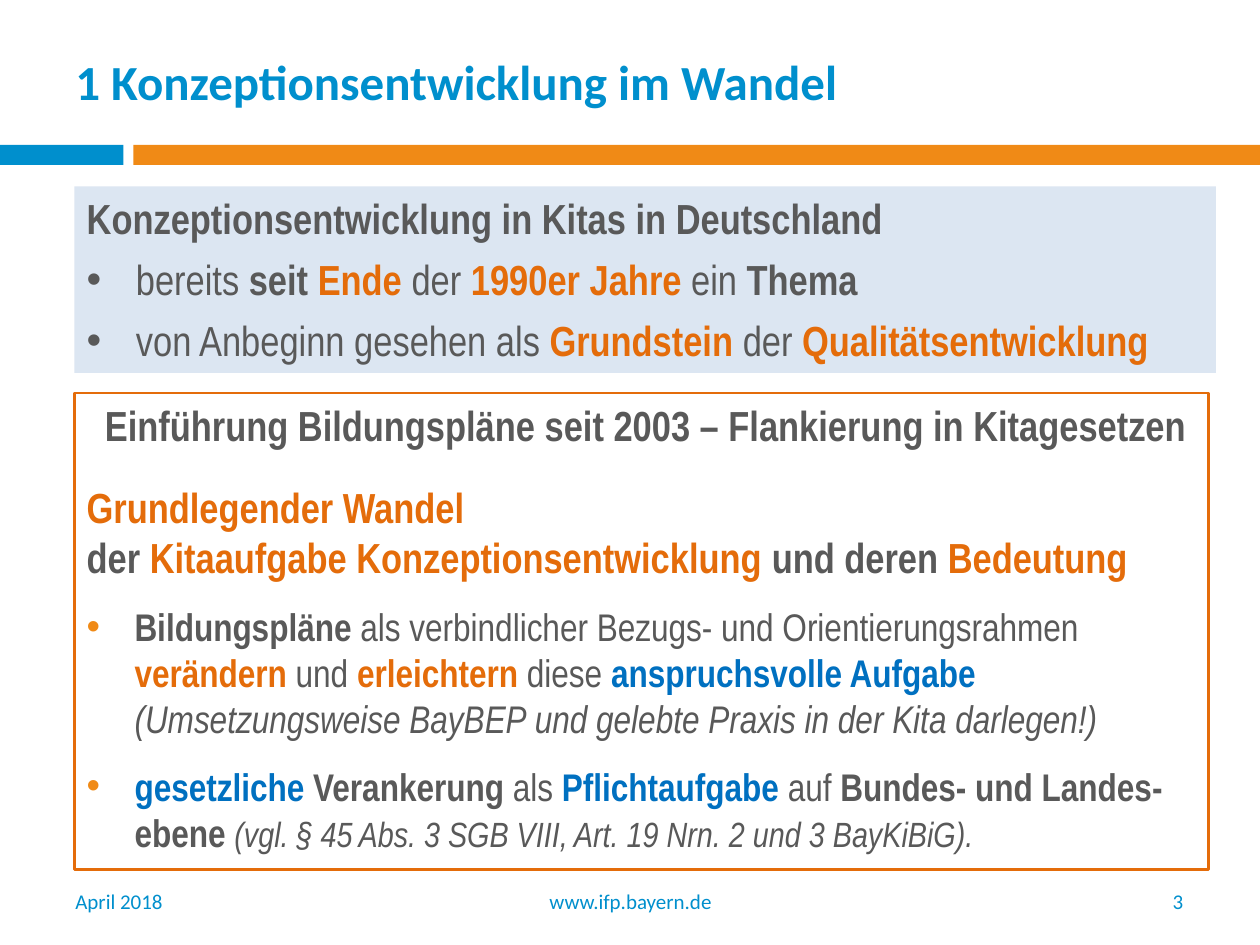
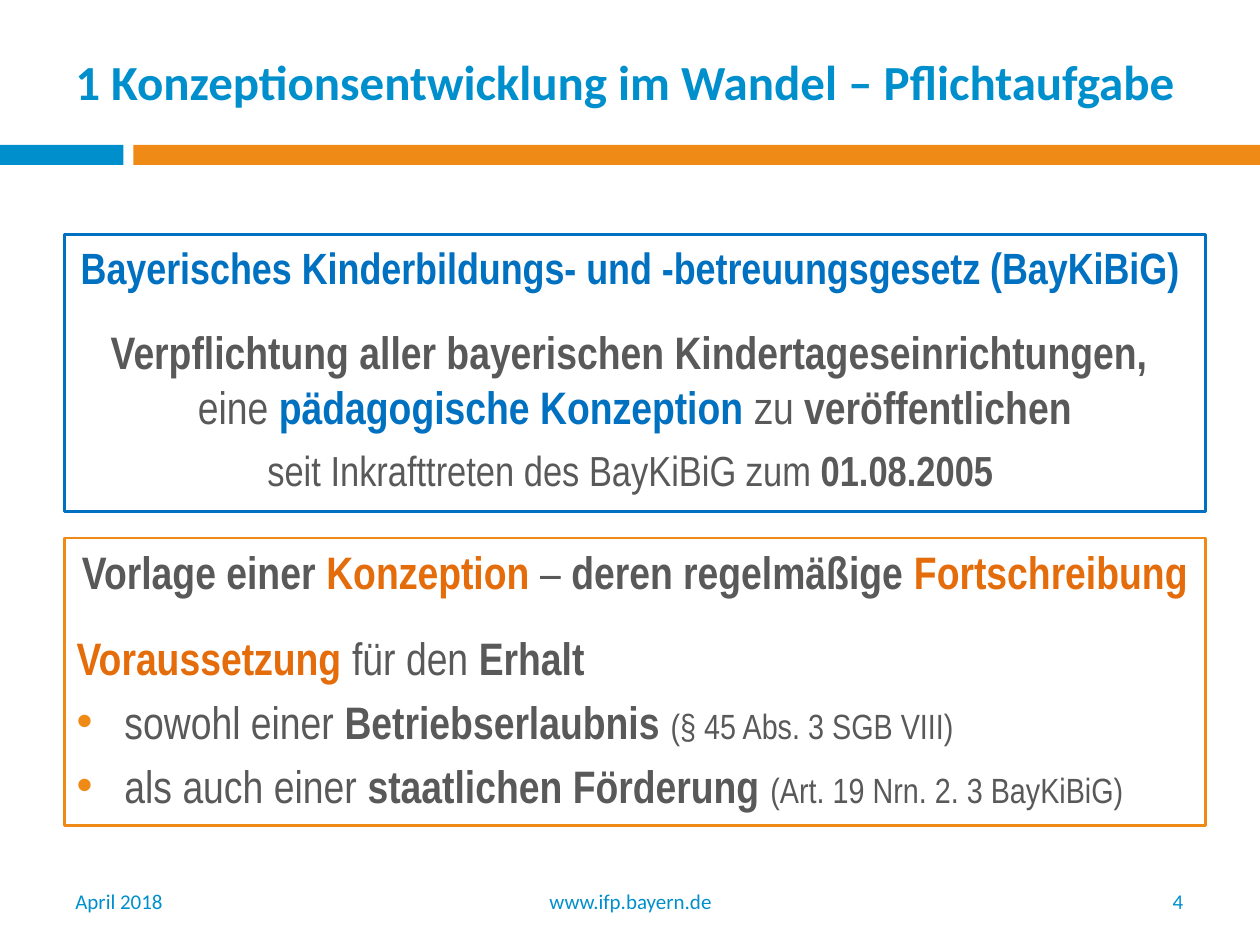
from pptx import Presentation
from pptx.util import Inches, Pt
from pptx.dml.color import RGBColor
from pptx.enum.shapes import MSO_SHAPE as Shape
from pptx.enum.text import PP_ALIGN as Align, MSO_ANCHOR as Anchor
from pptx.oxml.ns import qn
from lxml.etree import SubElement

CYAN, AMBER, ORANGE = "008FCD", "F08A16", "E46C0A"
BLUE, GRAY, PALE = "0070C0", "595959", "DCE6F2"
TINTS = {"o": ORANGE, "u": BLUE}


def color(code):
    """Turn a hex string into a colour."""
    return RGBColor.from_string(code)


class Deck:
    """Hold the style and the current slide."""

    def __init__(self):
        """Start an empty 4:3 deck."""
        self.prs = Presentation()
        self.prs.slide_width, self.prs.slide_height = Inches(10), Inches(7.5)
        self.slide = None

    def page(self, title, num):
        """Add a slide with title, bands and footer."""
        self.slide = self.prs.slides.add_slide(self.prs.slide_layouts[6])
        self.rect((1.06, 1.15, 8.94, 0.16), fill=AMBER)
        self.rect((0, 1.15, 0.98, 0.16), fill=CYAN)
        self.label((0.5, 0.3, 9, 0.69), title, 28, bold=True)
        self.label((0.5, 6.95, 2.33, 0.4), "April 2018", 12)
        self.label((3.42, 6.95, 3.17, 0.4), "www.ifp.bayern.de", 12, Align.CENTER)
        self.label((7.17, 6.95, 2.32, 0.4), str(num), 12, Align.RIGHT)

    def rect(self, area, fill=None, line=None):
        """Draw a rectangle with an optional fill and outline."""
        box = self.slide.shapes.add_shape(Shape.RECTANGLE, *map(Inches, area))
        box.shadow.inherit = False
        if fill:
            box.fill.solid()
            box.fill.fore_color.rgb = color(fill)
        else:
            box.fill.background()
        if line:
            box.line.color.rgb = color(line)
            box.line.width = Pt(1.5)
        else:
            box.line.fill.background()
        return box

    def label(self, area, text, size, align=Align.LEFT, bold=False):
        """Write one line in the title and footer style."""
        frame = self.slide.shapes.add_textbox(*map(Inches, area)).text_frame
        frame.word_wrap = True
        frame.vertical_anchor = Anchor.MIDDLE
        frame.text = text
        para = frame.paragraphs[0]
        para.alignment = align
        self.style(para.runs[0], "Calibri", size, CYAN, bold)

    def style(self, run, name, size, tint, bold=False, italic=False):
        """Set the font of a run."""
        font = run.font
        font.name, font.size = name, Pt(size)
        font.bold, font.italic = bold, italic
        font.color.rgb = color(tint)

    def panel(self, area, paras, fill=None, line=None):
        """Draw a box and fill it with paragraphs."""
        frame = self.rect(area, fill, line).text_frame
        frame.word_wrap = True
        frame.vertical_anchor = Anchor.TOP
        for num, (size, runs, opts) in enumerate(paras):
            para = frame.add_paragraph() if num else frame.paragraphs[0]
            self.fill(para, size, runs, **opts)

    def fill(self, para, size, runs, align=Align.LEFT, gap=0, dot=None, hang=0.38):
        """Write runs marked b, i, o (orange), u (blue) or s (small)."""
        para.alignment = align
        para.space_before = Pt(gap)
        if dot:
            self.bullet(para, dot, hang)
        for text, marks in runs:
            run = para.add_run()
            run.text = text
            tint = next((TINTS[m] for m in marks if m in TINTS), GRAY)
            self.style(run, "Arial Narrow", 20 if "s" in marks else size,
                       tint, "b" in marks, "i" in marks)

    def bullet(self, para, tint, hang):
        """Give a paragraph a coloured bullet and hanging indent."""
        props = para._p.get_or_add_pPr()
        props.set("marL", str(Inches(hang)))
        props.set("indent", str(-Inches(hang)))
        SubElement(SubElement(props, qn("a:buClr")), qn("a:srgbClr")).set("val", tint)
        SubElement(props, qn("a:buFont")).set("typeface", "Arial")
        SubElement(props, qn("a:buChar")).set("char", "•")


def change(deck):
    """Build the slide on how concept work has changed."""
    deck.page("1 Konzeptionsentwicklung im Wandel", 3)
    item = dict(gap=12, dot=AMBER)
    deck.panel((0.59, 3.12, 9, 3.78), [
        (24, [("Einführung Bildungspläne seit 2003 – Flankierung in Kitagesetzen ", "b")],
         dict(align=Align.RIGHT)),
        (24, [("Grundlegender Wandel", "bo")], dict(gap=18)),
        (24, [("der ", "b"), ("Kitaaufgabe Konzeptionsentwicklung ", "bo"),
              ("und deren ", "b"), ("Bedeutung", "bo")], {}),
        (22, [("Bildungspläne", "b"),
              (" als verbindlicher Bezugs- und Orientierungsrahmen ", ""),
              ("verändern ", "bo"), ("und ", ""), ("erleichtern ", "bo"),
              ("diese ", ""), ("anspruchsvolle Aufgabe ", "bu"),
              ("(Umsetzungsweise BayBEP und gelebte Praxis in der Kita darlegen!)", "i")],
         item),
        (22, [("gesetzliche", "bu"), (" Verankerung ", "b"), ("als ", ""),
              ("Pflichtaufgabe ", "bu"), ("auf ", ""),
              ("Bundes- und Landes-ebene ", "b"),
              ("(vgl. § 45 Abs. 3 SGB VIII, Art. 19 Nrn. 2 und 3 BayKiBiG).", "is")],
         item),
    ], line=ORANGE)
    item = dict(gap=6, dot=GRAY, hang=0.39)
    deck.panel((0.59, 1.48, 9.06, 1.48), [
        (24, [("Konzeptionsentwicklung in Kitas in Deutschland", "b")], {}),
        (24, [("bereits", ""), (" seit ", "b"), ("Ende ", "bo"), ("der", ""),
              (" 1990er Jahre ", "bo"), ("ein", ""), (" Thema", "b")], item),
        (24, [("von Anbeginn gesehen als ", ""), ("Grundstein ", "bo"),
              ("der ", ""), ("Qualitätsentwicklung", "bo")], item),
    ], fill=PALE)


def duty(deck):
    """Build the slide on the legal duty."""
    deck.page("1 Konzeptionsentwicklung im Wandel – Pflichtaufgabe", 4)
    mid = dict(align=Align.CENTER)
    item = dict(gap=5.2, dot=AMBER)
    deck.panel((0.51, 4.27, 9.06, 2.28), [
        (26, [("Vorlage einer ", "b"), ("Konzeption ", "bo"), ("– ", ""),
              ("deren regelmäßige ", "b"), ("Fortschreibung", "bo")], mid),
        (26, [("Voraussetzung ", "bo"), ("für den", ""), (" Erhalt", "b")],
         dict(gap=18)),
        (26, [("sowohl einer ", ""), ("Betriebserlaubnis ", "b"),
              ("(§ 45 Abs. 3 SGB VIII)", "s")], item),
        (26, [("als auch einer ", ""), ("staatlichen Förderung ", "b"),
              ("(Art. 19 Nrn. 2. 3 BayKiBiG)", "s")], item),
    ], line=AMBER)
    deck.panel((0.51, 1.86, 9.06, 2.2), [
        (25, [("Bayerisches Kinderbildungs- und -betreuungsgesetz (BayKiBiG) ", "bu")], mid),
        (26, [("Verpflichtung aller bayerischen Kindertageseinrichtungen, ", "b")],
         dict(mid, gap=18)),
        (26, [("eine ", ""), ("pädagogische Konzeption ", "bu"), ("zu ", ""),
              ("veröffentlichen", "b")], mid),
        (24, [("seit Inkrafttreten des BayKiBiG zum ", ""), ("01.08.2005 ", "b")],
         dict(mid, gap=6)),
    ], line=BLUE)


def main():
    """Build and save the deck."""
    deck = Deck()
    change(deck)
    duty(deck)
    deck.prs.save("out.pptx")


if __name__ == "__main__":
    main()
